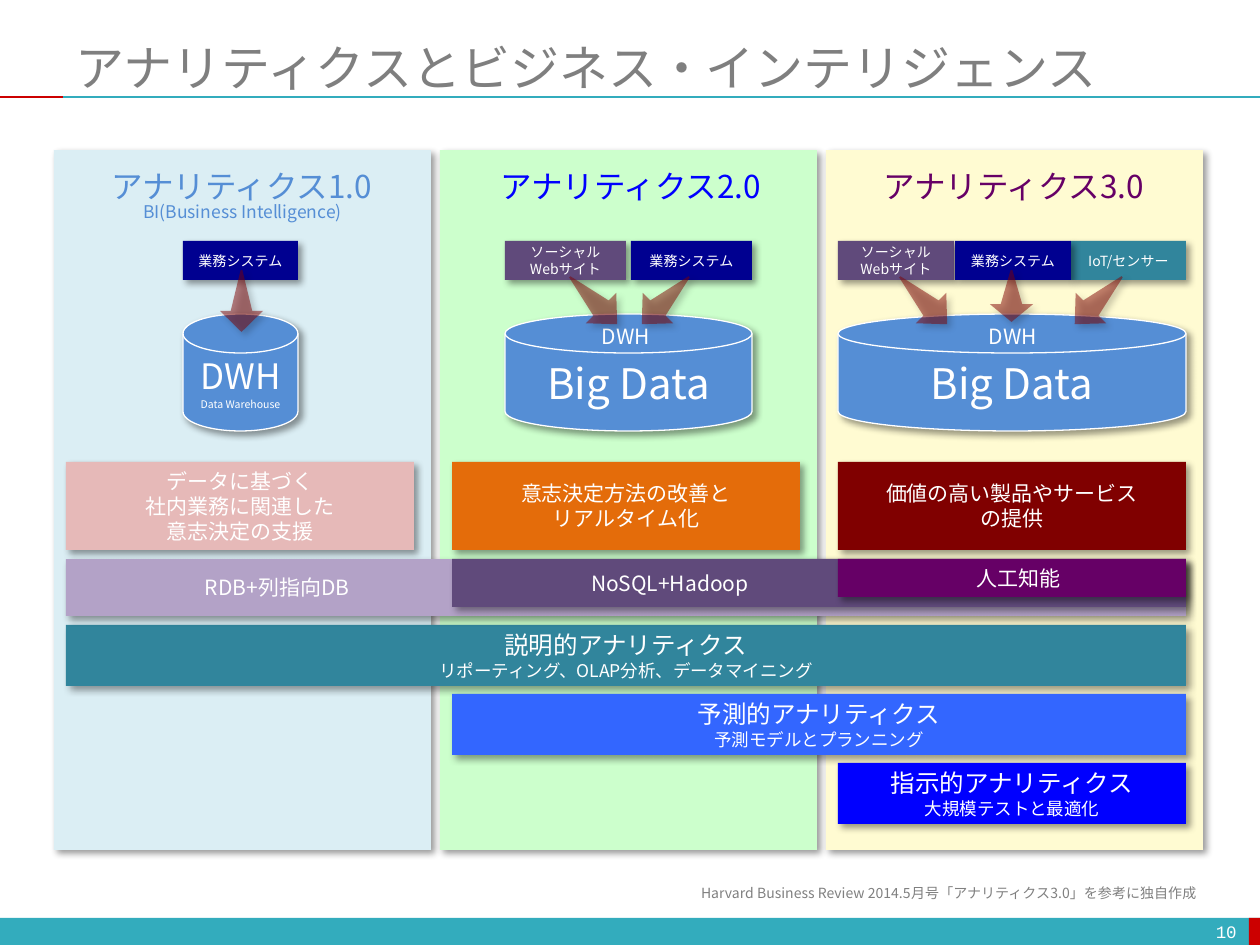
from dataclasses import dataclass

from lxml import etree
from pptx import Presentation
from pptx import util as u
from pptx.dml.color import RGBColor
from pptx.enum import lang, shapes, text
from pptx.oxml import ns

EMU_PER_PX = 914400 / 126
PITCH = 386
PANEL_LEFT, PANEL_WIDTH = 54, 377
COLUMN_LEFT, COLUMN_WIDTH = 66, 348
RIGHT_EDGE = COLUMN_LEFT + 2 * PITCH + COLUMN_WIDTH
RECT = shapes.MSO_SHAPE.RECTANGLE
DISK = shapes.MSO_SHAPE.FLOWCHART_MAGNETIC_DISK
CENTER, LEFT, RIGHT = text.PP_ALIGN.CENTER, text.PP_ALIGN.LEFT, text.PP_ALIGN.RIGHT


@dataclass(frozen=True)
class Theme:
    body: str = "Noto Sans CJK JP"
    title_font: str = "Calibri"
    number_font: str = "Courier New"
    white: str = "FFFFFF"
    black: str = "000000"
    title_gray: str = "7F7F7F"
    credit_gray: str = "808080"
    accent: str = "33ACBD"
    red: str = "CC0000"
    panels: tuple[str, ...] = ("DBEEF4", "CCFFCC", "FFFBD2")
    headings: tuple[str, ...] = ("558ED5", "0000FF", "660066")
    goals: tuple[str, ...] = ("E6B9B8", "E46C0A", "800000")
    platforms: tuple[str, ...] = ("B3A2C7", "604A7B", "660066")
    analytics: tuple[str, ...] = ("31859C", "3366FF", "0000FF")
    disk: str = "558ED5"
    system: str = "000090"
    social: str = "604A7B"
    sensor: str = "31859C"
    arrow: str = "800000"
    title: int = 28
    huge: int = 24
    large: int = 20
    heading: int = 18
    medium: int = 14
    normal: int = 12
    small: int = 10
    label: int = 8
    tiny: int = 6


THEME = Theme()


@dataclass(frozen=True)
class Line:
    words: str
    size: int


@dataclass(frozen=True)
class Block:
    left: int
    top: int
    width: int
    height: int
    fill: str
    lines: tuple[Line, ...] = ()
    preset: shapes.MSO_SHAPE = RECT
    indent: int = 0
    outlined: bool = False
    shaded: bool = True


@dataclass(frozen=True)
class Arrow:
    left: int
    top: int
    height: int
    rotation: int = 0


def px(length: float) -> int:
    return round(length * EMU_PER_PX)


def color(code: str) -> RGBColor:
    return RGBColor.from_string(code)


def lines_of(size: int, *words: str) -> tuple[Line, ...]:
    return tuple(Line(item, size) for item in words)


def write(frame, lines, *, ink=THEME.white, font=THEME.body, align=CENTER, gap=0) -> None:
    for index, line in enumerate(lines):
        para = frame.paragraphs[0] if index == 0 else frame.add_paragraph()
        para.alignment = align
        if index and gap:
            para.space_before = u.Pt(gap)
        span = para.add_run()
        span.text = line.words
        span.font.size = u.Pt(line.size)
        span.font.color.rgb = color(ink)
        span.font.name = font
        span.font.language_id = lang.MSO_LANGUAGE_ID.JAPANESE
        etree.SubElement(span.font._element, ns.qn("a:ea"), typeface=font)


def add_shadow(shape) -> None:
    shape.shadow.inherit = False
    effects = shape._element.spPr.find(ns.qn("a:effectLst"))
    shadow = etree.SubElement(effects, ns.qn("a:outerShdw"), blurRad=str(u.Pt(4)),
                              dist=str(u.Pt(3)), dir="2700000", algn="tl", rotWithShape="0")
    shade = etree.SubElement(shadow, ns.qn("a:srgbClr"), val=THEME.black)
    etree.SubElement(shade, ns.qn("a:alpha"), val="40000")


def paint(shape, fill: str, outlined: bool, shaded: bool) -> None:
    shape.fill.solid()
    shape.fill.fore_color.rgb = color(fill)
    if outlined:
        shape.line.color.rgb = color(THEME.white)
        shape.line.width = u.Pt(0.75)
    else:
        shape.line.fill.background()
    if shaded:
        add_shadow(shape)
    else:
        shape.shadow.inherit = False


def draw_block(page, block: Block) -> None:
    shape = page.shapes.add_shape(block.preset, px(block.left), px(block.top),
                                  px(block.width), px(block.height))
    paint(shape, block.fill, block.outlined, block.shaded)
    frame = shape.text_frame
    frame.vertical_anchor = text.MSO_ANCHOR.MIDDLE
    if block.indent:
        frame.margin_left = px(block.indent)
    write(frame, block.lines, align=LEFT if block.indent else CENTER,
          gap=1 if block.preset == DISK else 0)


def draw_label(page, left: int, top: int, width: int, height: int, line: Line, *,
               wrap=False, anchor=text.MSO_ANCHOR.TOP, **style) -> None:
    box = page.shapes.add_textbox(px(left), px(top), px(width), px(height))
    box.text_frame.word_wrap = wrap
    box.text_frame.vertical_anchor = anchor
    write(box.text_frame, [line], **style)


def draw_arrow(page, arrow: Arrow) -> None:
    outline = ((0, 0.66), (0.25, 0.66), (0.48, 0), (0.52, 0), (0.75, 0.66), (1, 0.66), (0.5, 1))
    points = [(px(arrow.left + 43 * x), px(arrow.top + arrow.height * y)) for x, y in outline]
    builder = page.shapes.build_freeform(*points[0])
    builder.add_line_segments(points[1:], close=True)
    shape = builder.convert_to_shape()
    shape.rotation = arrow.rotation
    paint(shape, THEME.arrow, False, True)
    tint = shape._element.spPr.find(ns.qn("a:solidFill"))[0]
    etree.SubElement(tint, ns.qn("a:alpha"), val="49000")


def draw_rule(page, start: int, end: int, ink: str) -> None:
    rule = page.shapes.add_connector(shapes.MSO_CONNECTOR.STRAIGHT,
                                     px(start), px(97), px(end), px(97))
    rule.line.color.rgb = color(ink)
    rule.line.width = u.Pt(1)
    etree.SubElement(rule._element.spPr, ns.qn("a:effectLst"))


def source(left: int, width: int, fill: str, *words: str) -> Block:
    return Block(left, 241, width, 39, fill, lines_of(THEME.label, *words))


def disk(left: int, width: int, *lines: Line) -> Block:
    return Block(left, 314, width, 117, THEME.disk, lines, DISK, outlined=True)


def bar(column: int, top: int, height: int, fill: str, lines, indent=0) -> Block:
    left = COLUMN_LEFT + column * PITCH
    return Block(left, top, RIGHT_EDGE - left, height, fill, lines, indent=indent)


def main() -> None:
    deck = Presentation()
    deck.slide_width, deck.slide_height = px(1260), px(945)
    page = deck.slides.add_slide(deck.slide_layouts[6])
    middle = text.MSO_ANCHOR.MIDDLE

    draw_block(page, Block(0, 918, 1260, 27, THEME.accent, shaded=False))
    draw_block(page, Block(1249, 918, 11, 27, THEME.red, shaded=False))
    draw_rule(page, 63, 1260, THEME.accent)
    draw_rule(page, 0, 63, THEME.red)
    draw_label(page, 63, 38, 1197, 58, Line("アナリティクスとビジネス・インテリジェンス", THEME.title),
               wrap=True, anchor=middle, ink=THEME.title_gray, font=THEME.title_font, align=LEFT)
    draw_label(page, 955, 916, 294, 30, Line("10", THEME.small),
               wrap=True, anchor=middle, font=THEME.number_font, align=RIGHT)

    social, system = ("ソーシャル", "Webサイト"), "業務システム"
    big_data = Line("Big Data", THEME.huge)
    goals = (("データに基づく", "社内業務に関連した", "意志決定の支援"),
             ("意志決定方法の改善と", "リアルタイム化"), ("価値の高い製品やサービス", "の提供"))
    analytics = (("説明的アナリティクス", "リポーティング、OLAP分析、データマイニング"),
                 ("予測的アナリティクス", "予測モデルとプランニング"),
                 ("指示的アナリティクス", "大規模テストと最適化"))
    platforms = (("RDB+列指向DB", 57), ("NoSQL+Hadoop", 48), ("人工知能", 38))

    blocks = [Block(PANEL_LEFT + i * PITCH, 150, PANEL_WIDTH, 700, fill)
              for i, fill in enumerate(THEME.panels)]
    blocks += [
        disk(183, 115, Line("DWH", THEME.large), Line("Data Warehouse", THEME.tiny)),
        source(183, 115, THEME.system, system),
        source(1071, 115, THEME.sensor, "IoT/センサー"),
        disk(505, 247, big_data),
        source(505, 121, THEME.social, *social),
        source(631, 121, THEME.system, system),
        disk(838, 348, big_data),
        source(838, 116, THEME.social, *social),
        source(955, 116, THEME.system, system),
    ]
    blocks += [Block(COLUMN_LEFT + i * PITCH, 462, COLUMN_WIDTH, 88, THEME.goals[i],
                     lines_of(THEME.normal, *words)) for i, words in enumerate(goals)]
    blocks += [bar(i, 625 + 69 * i, 61, THEME.analytics[i],
                   (Line(name, THEME.medium), Line(detail, THEME.small)))
               for i, (name, detail) in enumerate(analytics)]
    blocks += [bar(i, 559, height, THEME.platforms[i], lines_of(THEME.normal, name), indent=139)
               for i, (name, height) in enumerate(platforms)]
    for block in blocks:
        draw_block(page, block)

    for left in (587, 974):
        draw_label(page, left, 317, 78, 38, Line("DWH", THEME.normal))
    for i, (left, ink) in enumerate(zip((92, 481, 864), THEME.headings), start=1):
        draw_label(page, left, 161, 299, 50, Line(f"アナリティクス{i}.0", THEME.heading), ink=ink)
    draw_label(page, 122, 195, 241, 34, Line("BI(Business Intelligence)", THEME.small),
               ink=THEME.headings[0])

    for arrow in (Arrow(220, 270, 62), Arrow(572, 267, 67, 315), Arrow(644, 267, 67, 45),
                  Arrow(990, 270, 52), Arrow(902, 267, 67, 315), Arrow(1077, 267, 67, 45)):
        draw_arrow(page, arrow)
    draw_label(page, 665, 878, 544, 30,
               Line("Harvard Business Review 2014.5月号「アナリティクス3.0」を参考に独自作成", THEME.label),
               ink=THEME.credit_gray, align=RIGHT)
    deck.save("out.pptx")


if __name__ == "__main__":
    main()
